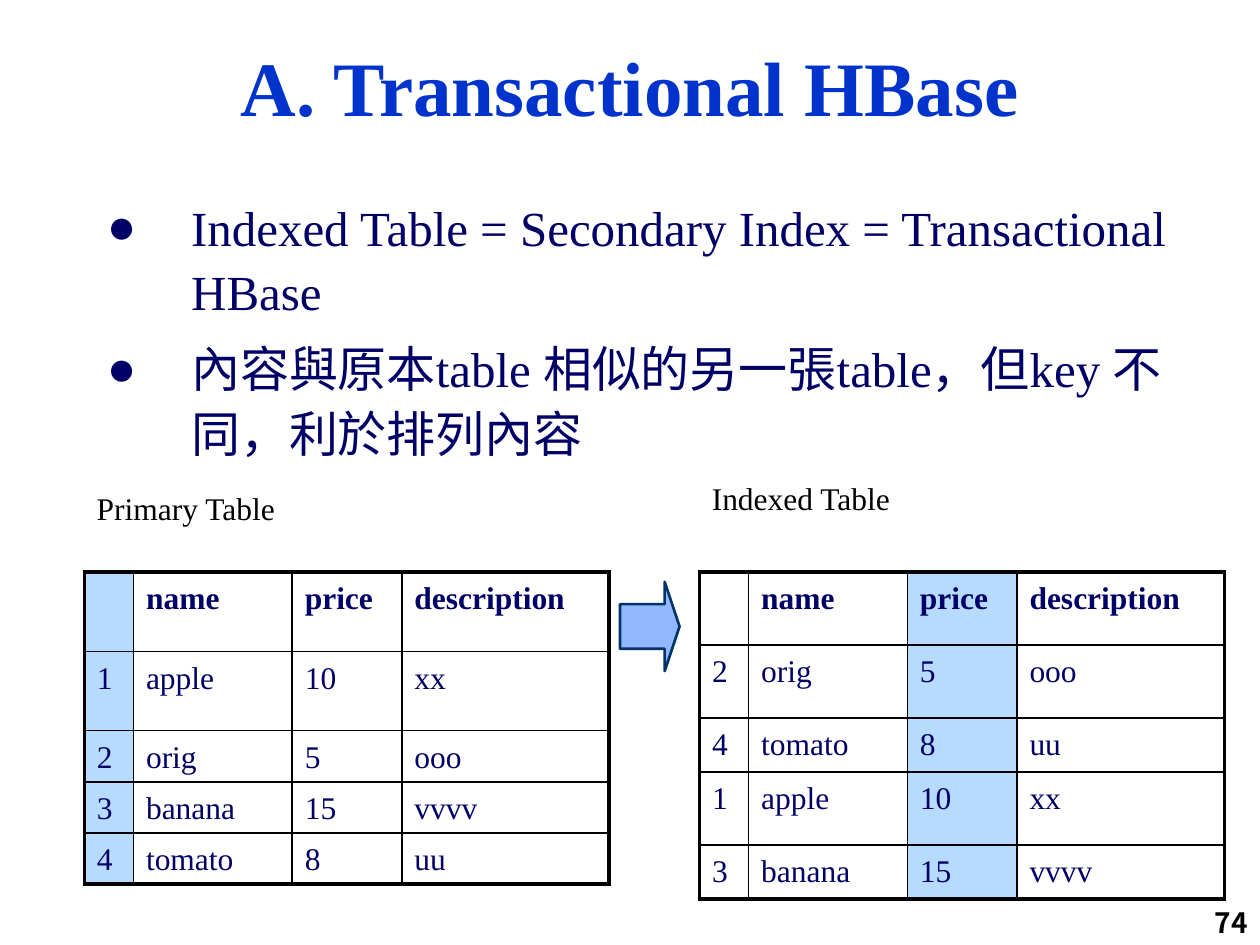
import pptx
import pptx.util
import pptx.dml.color
import pptx.enum.shapes
import pptx.enum.text
import pptx.oxml.ns
import lxml.etree

Cm = pptx.util.Cm
Pt = pptx.util.Pt
RGB = pptx.dml.color.RGBColor.from_string
qn = pptx.oxml.ns.qn
ALIGN = pptx.enum.text.PP_ALIGN
ANCHOR = pptx.enum.text.MSO_ANCHOR
COLORS = {"title": "0033CC", "text": "000066", "black": "000000",
          "key": "99CCFF", "arrow": "6699FF", "outline": "003366"}
SERIF = "Times New Roman"
CJK = "Noto Sans CJK SC"


def format_text(tf, size, color, bold=False, font=SERIF):
    for p in tf.paragraphs:
        for r in p.runs:
            r.font.size = Pt(size)
            r.font.bold = bold
            r.font.name = font
            r.font.color.rgb = RGB(COLORS[color])
            ea = lxml.etree.SubElement(r.font._element, qn("a:ea"))
            ea.set("typeface", CJK)


def fill_translucent(fill, element, color):
    fill.solid()
    fill.fore_color.rgb = RGB(COLORS[color])
    clr = element.find(qn("a:solidFill")).find(qn("a:srgbClr"))
    lxml.etree.SubElement(clr, qn("a:alpha")).set("val", "70000")


prs = pptx.Presentation()
prs.slide_width = Cm(25.4)
prs.slide_height = Cm(19.05)
slide = prs.slides.add_slide(prs.slide_layouts[1])

title = slide.shapes.title
title.left, title.top, title.width, title.height = Cm(1.9), Cm(0.53), Cm(21.6), Cm(2.41)
tf = title.text_frame
tf.text = "A. Transactional HBase"
tf.vertical_anchor = ANCHOR.MIDDLE
tf.paragraphs[0].alignment = ALIGN.CENTER
format_text(tf, 44, "title", bold=True)

body = slide.placeholders[1]
body.left, body.top, body.width, body.height = Cm(1.9), Cm(3.73), Cm(22.2), Cm(7.39)
tf = body.text_frame
tf.auto_size = pptx.enum.text.MSO_AUTO_SIZE.NONE
points = ["Indexed Table = Secondary Index = Transactional HBase",
          "內容與原本table 相似的另一張table，但key 不同，利於排列內容"]
for i, point in enumerate(points):
    p = tf.paragraphs[0] if i == 0 else tf.add_paragraph()
    p.text = point
    p.line_spacing = 1.1
    p.space_before = Pt(7 * i)
    pPr = p._p.get_or_add_pPr()
    pPr.set("marL", str(Cm(1.7)))
    pPr.set("indent", str(-Cm(1.7)))
    lxml.etree.SubElement(pPr, qn("a:buChar")).set("char", "●")
format_text(tf, 28, "text")

header = ["", "name", "price", "description"]
tables = [
    {"label": "Primary Table", "left": 1.7, "label_top": 9.73, "key": 0,
     "heights": [1.6, 1.6, 1.03, 1.03, 1.03],
     "rows": [header, ["1", "apple", "10", "xx"], ["2", "orig", "5", "ooo"],
              ["3", "banana", "15", "vvvv"], ["4", "tomato", "8", "uu"]]},
    {"label": "Indexed Table", "left": 14.1, "label_top": 9.53, "key": 2,
     "heights": [1.47, 1.47, 1.03, 1.47, 1.03],
     "rows": [header, ["2", "orig", "5", "ooo"], ["4", "tomato", "8", "uu"],
              ["1", "apple", "10", "xx"], ["3", "banana", "15", "vvvv"]]},
]
widths = [0.99, 3.2, 2.21, 4.18]

for spec_table in tables:
    left = Cm(spec_table["left"])
    rows = spec_table["rows"]
    frame = slide.shapes.add_table(len(rows), len(header), left, Cm(11.53),
                                   Cm(sum(widths)), Cm(sum(spec_table["heights"])))
    table = frame.table
    table.first_row = False
    table.horz_banding = False
    for column, width in zip(table.columns, widths):
        column.width = Cm(width)
    for row, height in zip(table.rows, spec_table["heights"]):
        row.height = Cm(height)
    for i, values in enumerate(rows):
        for j, value in enumerate(values):
            cell = table.cell(i, j)
            cell.text = value
            cell.text_frame.paragraphs[0].line_spacing = 1.1
            format_text(cell.text_frame, 18, "text", bold=i == 0)
            tcPr = cell._tc.get_or_add_tcPr()
            outer = {"L": j == 0, "R": j == len(header) - 1,
                     "T": i == 0, "B": i == len(rows) - 1}
            for side, is_outer in outer.items():
                ln = lxml.etree.SubElement(tcPr, qn("a:ln" + side))
                ln.set("w", str(Pt(2.25 if is_outer else 1)))
                line_fill = lxml.etree.SubElement(ln, qn("a:solidFill"))
                clr = lxml.etree.SubElement(line_fill, qn("a:srgbClr"))
                clr.set("val", COLORS["black"])
            if j == spec_table["key"]:
                fill_translucent(cell.fill, tcPr, "key")
            else:
                cell.fill.background()

    label = slide.shapes.add_textbox(left, Cm(spec_table["label_top"]), Cm(5.59), Cm(1.27))
    tf = label.text_frame
    tf.word_wrap = True
    tf.text = spec_table["label"]
    format_text(tf, 18, "black")

arrow = slide.shapes.add_shape(pptx.enum.shapes.MSO_SHAPE.RIGHT_ARROW,
                               Cm(12.5), Cm(11.73), Cm(1.2), Cm(1.8))
arrow.adjustments[0] = 0.5
arrow.adjustments[1] = 0.25
arrow.shadow.inherit = False
fill_translucent(arrow.fill, arrow._element.spPr, "arrow")
arrow.line.color.rgb = RGB(COLORS["outline"])
arrow.line.width = Pt(1.5)

number = slide.shapes.add_textbox(Cm(22.91), Cm(18.14), Cm(2.49), Cm(0.91))
tf = number.text_frame
tf.word_wrap = True
tf.text = "74"
tf.paragraphs[0].alignment = ALIGN.RIGHT
format_text(tf, 16, "black", bold=True, font=CJK)

prs.save("out.pptx")
